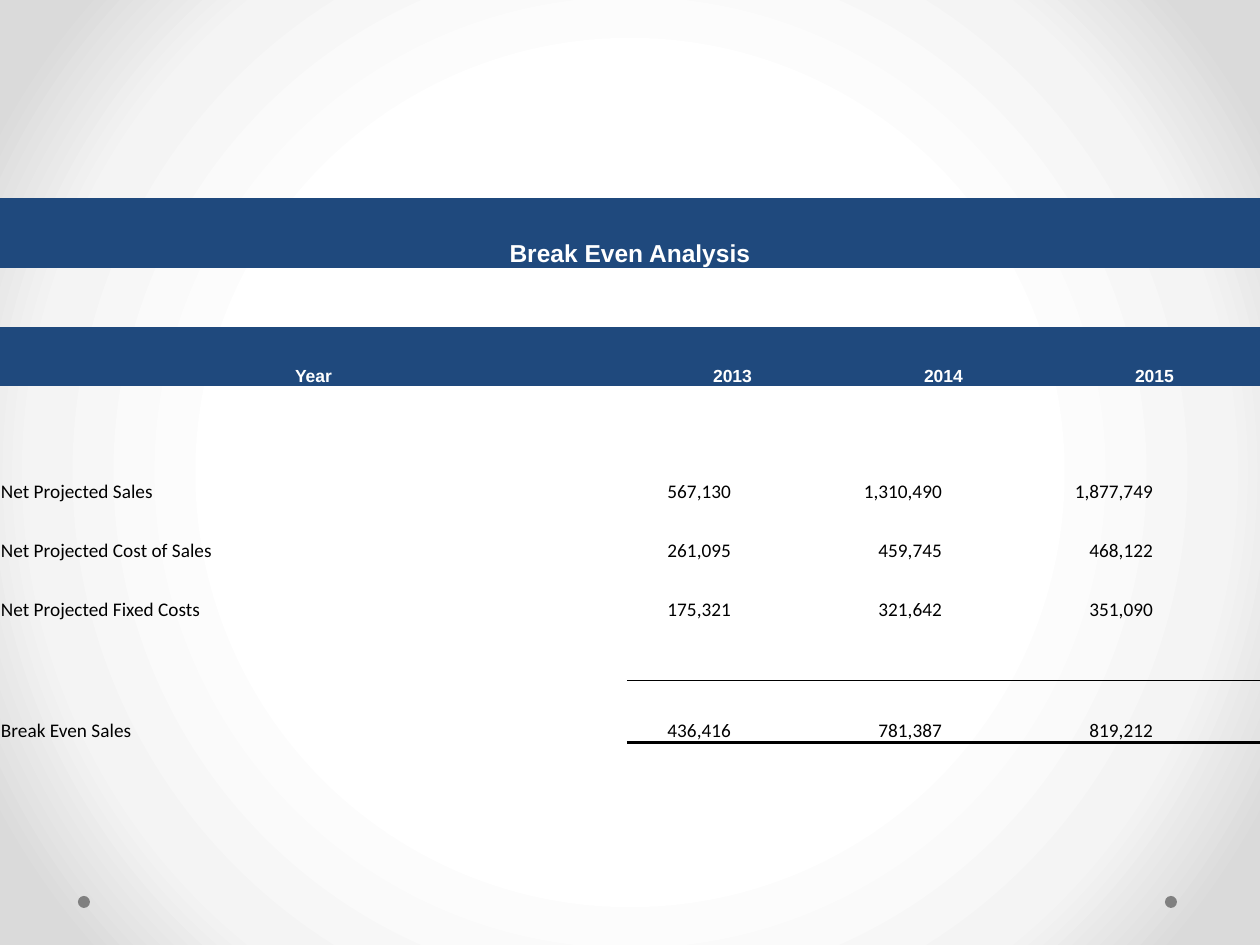
"""Build the break even analysis slide."""
import pptx
import pptx.util
import pptx.oxml
import pptx.oxml.ns
import pptx.dml.color
import pptx.enum.shapes
import pptx.enum.text

PX = 914400 / 126
NAVY, WHITE, BLACK, GREY = "1F497D", "FFFFFF", "000000", "808080"
NO_GRID = "{2D5ABB26-0587-4C30-8999-92F81FD0307C}"
STOPS = [(50, "FFFFFF"), (76, "F4F4F4"), (92, "DADADA")]
DOTS = [78, 1165]
COLS = [461, 166, 211, 211, 211]
ROWS = [70] + [59] * 7 + [62]
TITLE = "Break Even Analysis"
YEARS = ["2013", "2014", "2015"]
DATA = {
    4: ("Net Projected Sales", "567,130", "1,310,490", "1,877,749"),
    5: ("Net Projected Cost of Sales", "261,095", "459,745", "468,122"),
    6: ("Net Projected Fixed Costs", "175,321", "321,642", "351,090"),
    8: ("Break Even Sales", "436,416", "781,387", "819,212"),
}
LINES = {7: [("B", 0.5)], 8: [("T", 0.5), ("B", 2)]}
SPANS = {0: 4, 2: 1}
ALIGN = pptx.enum.text.PP_ALIGN
HEAD = {"name": "Arial", "size": 10, "bold": True}
TOP = {**HEAD, "size": 14}
BODY = {"name": "Calibri", "size": 11, "bold": False}


def px(num):
    return pptx.util.Emu(round(num * PX))


def hue(code):
    return pptx.dml.color.RGBColor.from_string(code)


def xml(text):
    space = pptx.oxml.ns.nsdecls("a", "p")
    return pptx.oxml.parse_xml(text.replace(">", f" {space}>", 1))


def back(slide):
    stops = "".join(
        f'<a:gs pos="{pos * 1000}"><a:srgbClr val="{code}"/></a:gs>'
        for pos, code in STOPS)
    mid = 'l="50000" t="50000" r="50000" b="50000"'
    slide.element.cSld.insert(0, xml(
        f'<p:bg><p:bgPr><a:gradFill rotWithShape="1"><a:gsLst>{stops}</a:gsLst>'
        f'<a:path path="circle"><a:fillToRect {mid}/></a:path></a:gradFill>'
        '<a:effectLst/></p:bgPr></p:bg>'))


def dot(slide, left):
    oval = pptx.enum.shapes.MSO_SHAPE.OVAL
    shape = slide.shapes.add_shape(oval, px(left), px(896), px(12), px(12))
    shape.shadow.inherit = False
    shape.fill.solid()
    shape.fill.fore_color.rgb = hue(GREY)
    shape.line.fill.background()


def rule(cell, side, width):
    cell._tc.get_or_add_tcPr().append(xml(
        f'<a:ln{side} w="{round(width * 12700)}"><a:solidFill>'
        f'<a:srgbClr val="{BLACK}"/></a:solidFill></a:ln{side}>'))


def put(cell, text, style, align, color, right=1):
    form = {"vertical_anchor": pptx.enum.text.MSO_ANCHOR.BOTTOM,
            "margin_left": px(1), "margin_right": px(right),
            "margin_top": px(1), "margin_bottom": 0}
    for key, val in form.items():
        setattr(cell, key, val)
    cell.text = text
    para = cell.text_frame.paragraphs[0]
    para.alignment = align
    font = para.runs[0].font
    for key, val in {**style, "size": pptx.util.Pt(style["size"])}.items():
        setattr(font, key, val)
    font.color.rgb = hue(color)


def grid(slide):
    frame = slide.shapes.add_table(
        len(ROWS), len(COLS), 0, px(198), px(sum(COLS)), px(sum(ROWS)))
    table = frame.table
    table.first_row = table.horz_banding = False
    table._tbl.tblPr.find(pptx.oxml.ns.qn("a:tableStyleId")).text = NO_GRID
    for col, width in zip(table.columns, COLS):
        col.width = px(width)
    for row, height in zip(table.rows, ROWS):
        row.height = px(height)
    for row, sides in LINES.items():
        for col in range(2, 5):
            for side, width in sides:
                rule(table.cell(row, col), side, width)
    for row in range(len(ROWS)):
        for col in range(len(COLS)):
            fill = table.cell(row, col).fill
            if row in SPANS:
                fill.solid()
                fill.fore_color.rgb = hue(NAVY)
            else:
                fill.background()
    for row, last in SPANS.items():
        table.cell(row, 0).merge(table.cell(row, last))
    put(table.cell(0, 0), TITLE, TOP, ALIGN.CENTER, WHITE)
    put(table.cell(2, 0), "Year", HEAD, ALIGN.CENTER, WHITE)
    for col, year in enumerate(YEARS, 2):
        put(table.cell(2, col), year, HEAD, ALIGN.CENTER, WHITE)
    for row, (label, *nums) in DATA.items():
        put(table.cell(row, 0), label, BODY, ALIGN.LEFT, BLACK)
        for col, num in enumerate(nums, 2):
            put(table.cell(row, col), num, BODY, ALIGN.RIGHT, BLACK, 107)


def main():
    deck = pptx.Presentation()
    deck.slide_width, deck.slide_height = px(1260), px(945)
    slide = deck.slides.add_slide(deck.slide_layouts[6])
    back(slide)
    for left in DOTS:
        dot(slide, left)
    grid(slide)
    deck.save("out.pptx")


if __name__ == "__main__":
    main()
